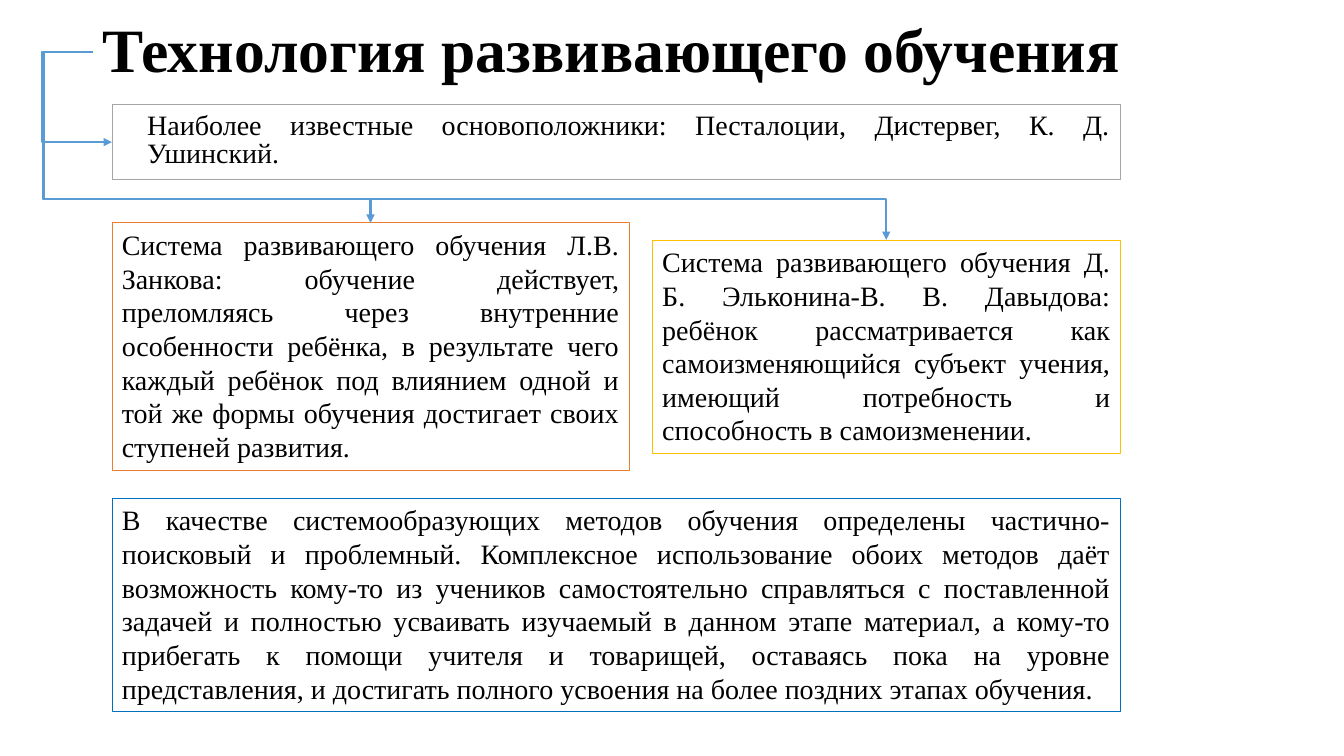
from dataclasses import dataclass

from lxml import etree
from pptx import Presentation
from pptx.dml.color import RGBColor
from pptx.enum.shapes import MSO_CONNECTOR, MSO_SHAPE
from pptx.enum.text import MSO_ANCHOR, MSO_AUTO_SIZE, PP_ALIGN
from pptx.oxml.ns import qn
from pptx.util import Inches, Pt

ELBOW = MSO_CONNECTOR.ELBOW
RECTANGLE = MSO_SHAPE.RECTANGLE
TOP, MIDDLE = MSO_ANCHOR.TOP, MSO_ANCHOR.MIDDLE
FIXED, GROW = MSO_AUTO_SIZE.NONE, MSO_AUTO_SIZE.SHAPE_TO_FIT_TEXT
LEFT, JUSTIFY = PP_ALIGN.LEFT, PP_ALIGN.JUSTIFY
SITE_TOP, SITE_LEFT = 0, 1


@dataclass(frozen=True)
class Theme:
    font: str = "Times New Roman"
    text: str = "000000"
    founders: str = "A5A5A5"
    zankov: str = "ED7D31"
    elkonin: str = "FFC000"
    methods: str = "0070C0"
    arrow: str = "5B9BD5"
    title_size: float = 44
    tab_size: float = 24
    body_size: float = 20
    border: float = 0.5
    arrow_width: float = 1.5


class SlideBuilder:
    def __init__(self, slide, theme):
        self.slide = slide
        self.theme = theme

    def place(self, shape, left, top, width, height):
        shape.left, shape.top = Inches(left), Inches(top)
        shape.width, shape.height = Inches(width), Inches(height)

    def outline(self, shape, color, width):
        shape.line.color.rgb = RGBColor.from_string(color)
        shape.line.width = Pt(width)

    def style(self, paragraph, size, align, bold=False):
        paragraph.alignment = align
        paragraph.font.name = self.theme.font
        paragraph.font.size = Pt(size)
        paragraph.font.bold = bold
        paragraph.font.color.rgb = RGBColor.from_string(self.theme.text)

    def title(self, text, *box):
        heading = self.slide.shapes.title
        self.place(heading, *box)
        frame = heading.text_frame
        frame.text = text
        frame.auto_size = FIXED
        frame.vertical_anchor = MIDDLE
        paragraph = frame.paragraphs[0]
        paragraph.line_spacing = 0.9
        self.style(paragraph, self.theme.title_size, LEFT, bold=True)
        return heading

    def body(self, text, color, *box):
        """Framed body text with a hanging indent and no bullet."""
        body = self.slide.placeholders[1]
        self.place(body, *box)
        self.outline(body, color, self.theme.border)
        frame = body.text_frame
        frame.auto_size = FIXED
        frame.vertical_anchor = TOP
        paragraph = frame.paragraphs[0]
        paragraph.line_spacing = 0.8
        paragraph.space_before = Pt(0)
        properties = paragraph._p.get_or_add_pPr()
        properties.set("marL", str(Inches(0.25)))
        properties.set("indent", str(Inches(-0.25)))
        etree.SubElement(properties, qn("a:buNone"))
        self.style(paragraph, self.theme.body_size, JUSTIFY)
        tab = paragraph.add_run()
        tab.text = "\t"
        tab.font.size = Pt(self.theme.tab_size)
        paragraph.add_run().text = text
        return body

    def panel(self, text, color, *box):
        panel = self.slide.shapes.add_shape(RECTANGLE, *map(Inches, box))
        panel.shadow.inherit = False
        panel.fill.background()
        self.outline(panel, color, self.theme.border)
        frame = panel.text_frame
        frame.word_wrap = True
        frame.auto_size = GROW
        frame.vertical_anchor = TOP
        frame.text = text
        self.style(frame.paragraphs[0], self.theme.body_size, JUSTIFY)
        return panel

    def arrow(self, source, target, site, lane_x, lane_y=None):
        """Bent arrow from the source's left side through the given lanes."""
        arrow = self.slide.shapes.add_connector(ELBOW, 0, 0, 0, 0)
        arrow.begin_connect(source, SITE_LEFT)
        arrow.end_connect(target, site)
        self.outline(arrow, self.theme.arrow, self.theme.arrow_width)
        etree.SubElement(arrow.line._get_or_add_ln(), qn("a:tailEnd"), type="triangle")
        properties = arrow._element.spPr
        etree.SubElement(properties, qn("a:effectLst"))

        # Bend positions are fractions of the arrow's width and height
        bends = [(Inches(lane_x) - arrow.begin_x) / arrow.width]
        if lane_y is not None:
            bends.append((Inches(lane_y) - arrow.begin_y) / arrow.height)
        geometry = properties.find(qn("a:prstGeom"))
        geometry.set("prst", f"bentConnector{len(bends) + 2}")
        guides = geometry.find(qn("a:avLst"))
        for number, bend in enumerate(bends, 1):
            etree.SubElement(guides, qn("a:gd"), name=f"adj{number}",
                             fmla=f"val {round(bend * 100000)}")


def main():
    presentation = Presentation()
    presentation.slide_width, presentation.slide_height = Inches(13.33), Inches(7.5)
    slide = presentation.slides.add_slide(presentation.slide_layouts[1])
    theme = Theme()
    builder = SlideBuilder(slide, theme)
    left, full_width = 1.11, 10

    # Title and founders
    title = builder.title("Технология развивающего обучения", 0.92, 0, 11.5, 1.04)
    founders = builder.body(
        "Наиболее известные основоположники: Песталоции, Дистервег, К. Д. Ушинский.",
        theme.founders, left, 1.04, full_width, 0.74)

    # Two systems and the shared methods
    zankov = builder.panel(
        "Система развивающего обучения Л.В. Занкова: обучение действует, "
        "преломляясь через внутренние особенности ребёнка, в результате чего "
        "каждый ребёнок под влиянием одной и той же формы обучения достигает "
        "своих ступеней развития.",
        theme.zankov, left, 2.21, 5.13, 2.46)
    elkonin = builder.panel(
        "Система развивающего обучения Д. Б. Эльконина-В. В. Давыдова: ребёнок "
        "рассматривается как самоизменяющийся субъект учения, имеющий "
        "потребность и способность в самоизменении.",
        theme.elkonin, 6.47, 2.38, 4.64, 2.12)
    builder.panel(
        "В качестве системообразующих методов обучения определены "
        "частично-поисковый и проблемный. Комплексное использование обоих "
        "методов даёт возможность кому-то из учеников самостоятельно справляться "
        "с поставленной задачей и полностью усваивать изучаемый в данном этапе "
        "материал, а кому-то прибегать к помощи учителя и товарищей, оставаясь "
        "пока на уровне представления, и достигать полного усвоения на более "
        "поздних этапах обучения.",
        theme.methods, left, 4.94, full_width, 2.12)

    # Arrows from the title
    for system in (zankov, elkonin):
        builder.arrow(title, system, SITE_TOP, 0.43, 1.97)
    builder.arrow(title, founders, SITE_LEFT, 0.42)

    presentation.save("out.pptx")


if __name__ == "__main__":
    main()
